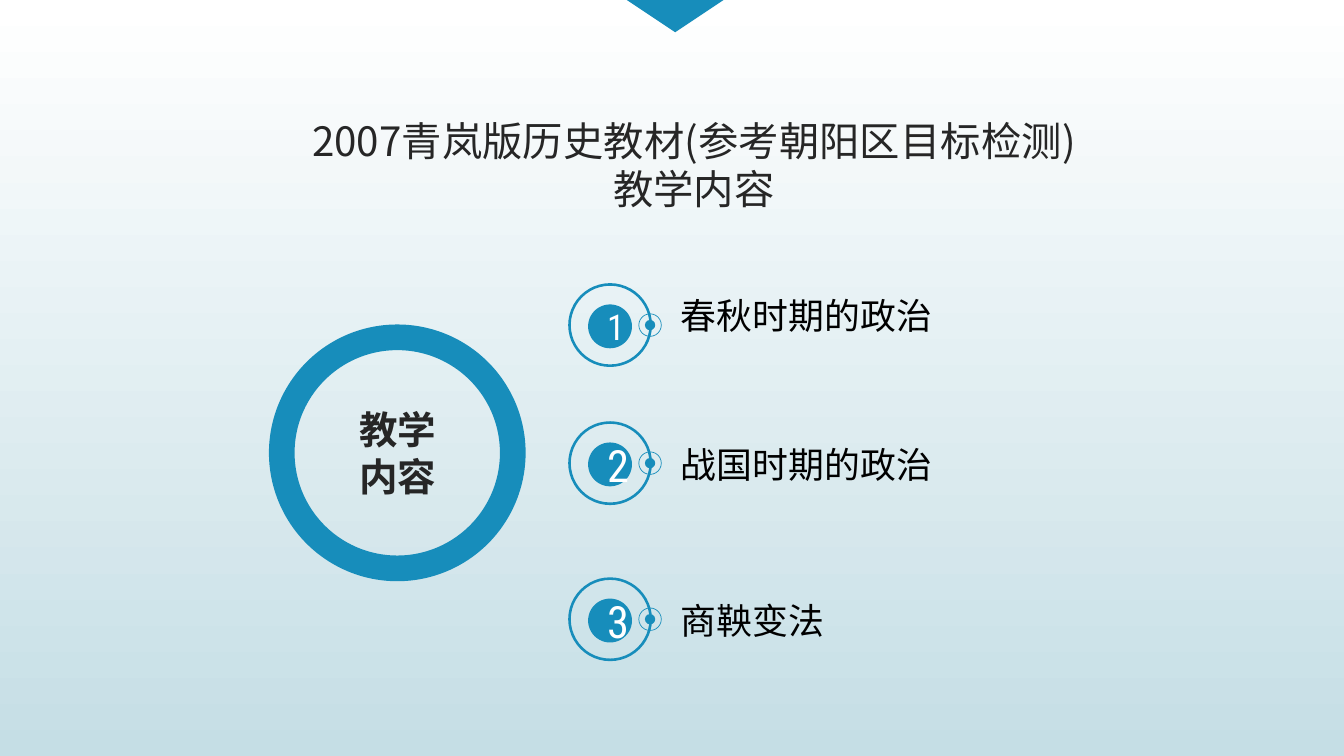
from dataclasses import dataclass

import lxml.etree
import pptx
import pptx.dml.color
import pptx.enum.shapes
import pptx.enum.text
import pptx.oxml.ns
import pptx.util

Inches = pptx.util.Inches
SHAPES = pptx.enum.shapes.MSO_SHAPE
ALIGN = pptx.enum.text.PP_ALIGN
ANCHOR = pptx.enum.text.MSO_ANCHOR

BLUE, DARK, BLACK, WHITE = "178DBB", "262626", "000000", "FFFFFF"
CHINESE_FONT, NUMBER_FONT = "Noto Sans CJK SC", "Roboto Condensed"
MARKER_X = 4.73


@dataclass
class Topic:
    number: str
    number_size: float
    center_y: float
    label: str
    label_top: float


@dataclass
class TextStyle:
    size: float
    color: str
    font: str = CHINESE_FONT
    bold: bool = False
    align: ALIGN = ALIGN.LEFT
    anchor: ANCHOR = ANCHOR.TOP


TOPICS = [
    Topic("1", 19.9, 2.52, "春秋时期的政治", 2.23),
    Topic("2", 24.8, 3.59, "战国时期的政治", 3.38),
    Topic("3", 24.8, 4.8, "商鞅变法", 4.59),
]
TITLE_STYLE = TextStyle(22.5, DARK, align=ALIGN.CENTER)
RING_STYLE = TextStyle(21.5, DARK, bold=True, align=ALIGN.CENTER)
LABEL_STYLE = TextStyle(20, BLACK)


def rgb(value: str) -> pptx.dml.color.RGBColor:
    return pptx.dml.color.RGBColor.from_string(value)


def set_attributes(target, values: dict) -> None:
    for name, value in values.items():
        setattr(target, name, value)


def write_text(shape, lines: list[str], style: TextStyle) -> None:
    frame = shape.text_frame
    set_attributes(frame, {
        "text": "\n".join(lines),
        "word_wrap": True,
        "auto_size": pptx.enum.text.MSO_AUTO_SIZE.NONE,
        "vertical_anchor": style.anchor,
    })
    for paragraph in frame.paragraphs:
        set_attributes(paragraph, {
            "alignment": style.align,
            "line_spacing": 1.0,
            "space_before": pptx.util.Pt(0),
        })
        for run in paragraph.runs:
            set_attributes(run.font, {
                "name": style.font,
                "size": pptx.util.Pt(style.size),
                "bold": style.bold,
            })
            run.font.color.rgb = rgb(style.color)
            # East Asian characters take their font from a separate element
            east_asian = lxml.etree.SubElement(
                run.font._element, pptx.oxml.ns.qn("a:ea"))
            east_asian.set("typeface", style.font)


def add_label(shapes, left: float, top: float, width: float, height: float,
              lines: list[str], style: TextStyle) -> None:
    box = shapes.add_textbox(*map(Inches, (left, top, width, height)))
    write_text(box, lines, style)


def add_blue_shape(shapes, kind, left: float, top: float, width: float, height: float):
    shape = shapes.add_shape(kind, *map(Inches, (left, top, width, height)))
    shape.shadow.inherit = False
    shape.fill.solid()
    shape.fill.fore_color.rgb = rgb(BLUE)
    shape.line.fill.background()
    return shape


def add_round(shapes, center_x: float, center_y: float, diameter: float,
              thickness: float = 0):
    """Draw a disc, or a ring when a relative thickness is given."""
    kind = SHAPES.DONUT if thickness else SHAPES.OVAL
    shape = add_blue_shape(shapes, kind, center_x - diameter / 2,
                           center_y - diameter / 2, diameter, diameter)
    if thickness:
        shape.adjustments[0] = thickness
    return shape


def add_topic(slide, topic: Topic) -> None:
    marker = slide.shapes.add_group_shape().shapes
    add_round(marker, MARKER_X, topic.center_y, 0.65, 0.031)
    add_round(marker, MARKER_X + 0.31, topic.center_y, 0.18, 0.031)
    add_round(marker, MARKER_X + 0.31, topic.center_y, 0.08)
    disc = add_round(marker, MARKER_X, topic.center_y + 0.01, 0.34)
    write_text(disc, [topic.number], TextStyle(
        topic.number_size, WHITE, NUMBER_FONT,
        align=ALIGN.CENTER, anchor=ANCHOR.MIDDLE))
    add_label(slide.shapes, 5.18, topic.label_top, 2.71, 0.64,
              [topic.label], LABEL_STYLE)


def main() -> None:
    presentation = pptx.Presentation()
    set_attributes(presentation, {
        "slide_width": Inches(10.42), "slide_height": Inches(5.86)})
    slide = presentation.slides.add_slide(presentation.slide_layouts[5])

    # Background, white at the top
    background = slide.background.fill
    background.gradient()
    background.gradient_angle = 270
    for stop, color in zip(background.gradient_stops, (WHITE, "C5DEE5")):
        stop.color.rgb = rgb(color)

    # Title and the pointer above it
    title = slide.shapes.title
    set_attributes(title, {
        "left": Inches(2.03), "top": Inches(0.85),
        "width": Inches(6.7), "height": Inches(0.86)})
    write_text(title, ["2007青岚版历史教材(参考朝阳区目标检测)", "教学内容"], TITLE_STYLE)
    pointer = add_blue_shape(slide.shapes, SHAPES.ISOSCELES_TRIANGLE, 4.86, 0, 0.75, 0.25)
    pointer.rotation = 180

    # Central ring
    ring = slide.shapes.add_group_shape().shapes
    add_round(ring, 3.08, 3.51, 1.99, 0.1)
    add_label(ring, 2.17, 3.1, 1.83, 0.82, ["教学", "内容"], RING_STYLE)

    # Numbered topics
    for topic in TOPICS:
        add_topic(slide, topic)

    presentation.save("out.pptx")


if __name__ == "__main__":
    main()
